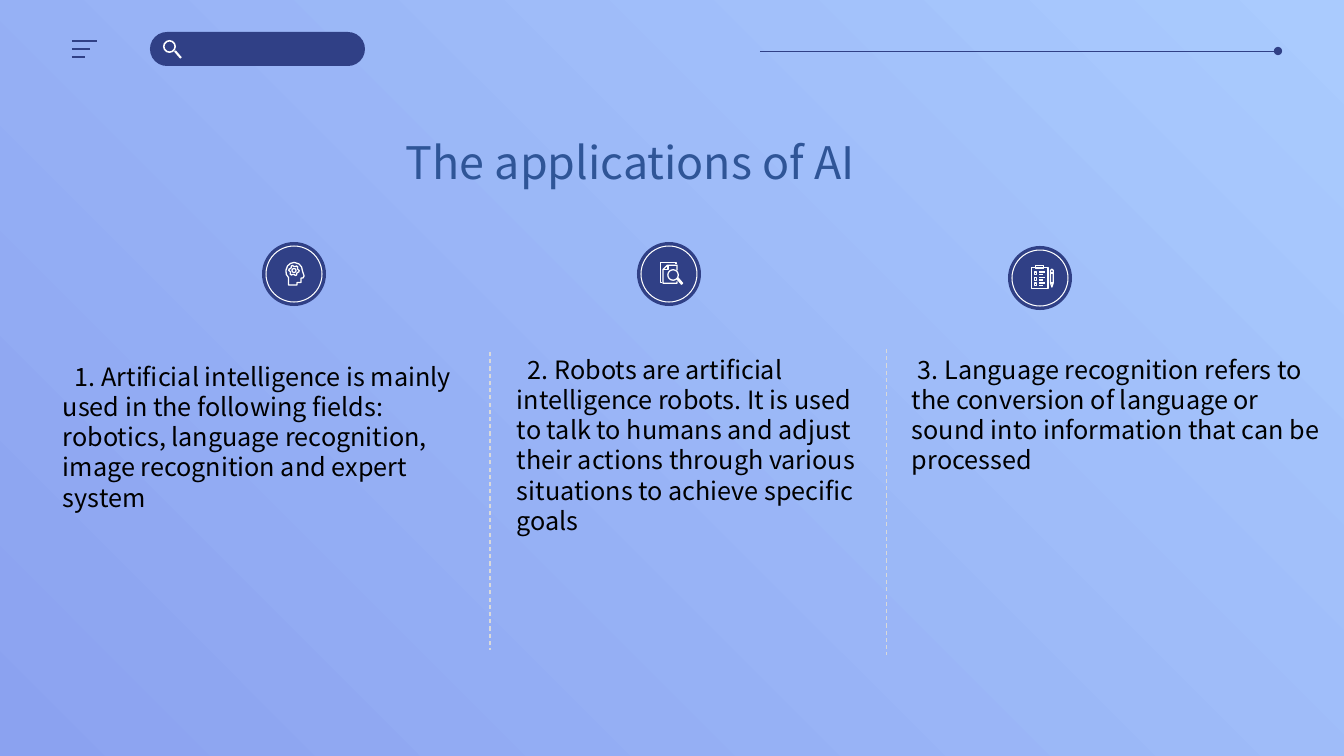
import math
import pptx
import pptx.util
import pptx.dml.color
import pptx.enum.dml
import pptx.enum.shapes
import pptx.enum.text
import lxml.etree

PX = 914400 / 100.8
NAVY, WHITE, GREY = "304086", "FFFFFF", "D9D9D9"
FONT = "Noto Sans CJK SC"
KIND = pptx.enum.shapes.MSO_SHAPE
DASH = pptx.enum.dml.MSO_LINE.DASH
NS = "{http://schemas.openxmlformats.org/drawingml/2006/main}"


def emu(px):
    """Turn px into EMU."""
    return pptx.util.Emu(round(px * PX))


def color(text):
    """Turn a hex string into a colour."""
    return pptx.dml.color.RGBColor.from_string(text)


def put(item, form):
    """Set each attribute of the item."""
    for name, value in form.items():
        setattr(item, name, value)


def style(shape, fill=None, line=None, width=1):
    """Set fill and line, with no shadow."""
    shape.shadow.inherit = False
    for part, tone in ((shape.fill, fill), (shape.line.fill, line)):
        if tone:
            part.solid()
            part.fore_color.rgb = color(tone)
        else:
            part.background()
    if line:
        shape.line.width = pptx.util.Pt(width)


def block(slide, kind, box, **form):
    """Add a preset shape in the box."""
    shape = slide.shapes.add_shape(kind, *map(emu, box))
    style(shape, **form)
    return shape


def rule(slide, start, end, tone, width, dash=None, tail=None):
    """Add a straight line."""
    line = slide.shapes.add_connector(
        pptx.enum.shapes.MSO_CONNECTOR.STRAIGHT, *map(emu, start + end))
    line.line.fill.solid()
    line.line.fill.fore_color.rgb = color(tone)
    put(line.line, {"width": pptx.util.Pt(width), "dash_style": dash})
    if tail:
        lxml.etree.SubElement(line.line._ln, NS + "tailEnd", type=tail)
    lxml.etree.SubElement(line._element.spPr, NS + "effectLst")


def write(slide, box, text, size, tone, indent, space=None):
    """Add a text box with a first-line indent."""
    frame = slide.shapes.add_textbox(*map(emu, box)).text_frame
    put(frame, {"word_wrap": True,
                "auto_size": pptx.enum.text.MSO_AUTO_SIZE.NONE})
    para = frame.paragraphs[0]
    if space:
        para.line_spacing = space
    para._p.get_or_add_pPr().set("indent", str(emu(indent)))
    run = para.add_run()
    run.text = text
    put(run.font, {"size": pptx.util.Pt(size), "name": FONT})
    run.font.color.rgb = color(tone)


def ring(x, y, radii, count=24):
    """Give the points of a closed ring, its radii taken in turn."""
    turn = math.tau / count
    return [(round(x + radii[i % len(radii)] * math.cos(i * turn)),
             round(y + radii[i % len(radii)] * math.sin(i * turn)))
            for i in range(count + 1)]


def frame(left, top, right, base):
    """Give the points of a closed rectangle."""
    return [(left, top), (right, top), (right, base), (left, base), (left, top)]


def head():
    """Give the strokes of a head with a gear, in tenths of px."""
    face = [(2, -116), (51, -100), (76, -70), (86, -25), (101, 20), (90, 40),
            (70, 42), (70, 85), (30, 85), (30, 110), (-55, 110), (-55, 35),
            (-76, 5), (-81, -35), (-65, -80), (-35, -106), (2, -116)]
    return [face, ring(0, -35, (52, 52, 40, 40)), ring(0, -35, (20,))]


def search():
    """Give the strokes of pages under a lens, in tenths of px."""
    back = [(70, -96), (70, -116), (-86, -116), (-86, 82), (-65, 82)]
    page = [(81, -36), (81, -88), (-15, -88), (-60, -44), (-60, 92),
            (81, 92), (81, 75)]
    fold = [(-10, -88), (-10, -41), (-60, -41)]
    grip = [(78, 47), (125, 102), (136, 92), (89, 37)]
    return [back, page, fold, ring(41, 10, (52,)), grip]


def board():
    """Give the strokes of a checklist and a pen, in tenths of px."""
    pen = [(106, -76), (106, 50), (119, 91), (133, 50), (133, -76),
           (119, -88), (106, -76)]
    marks = [frame(-86, -106, 81, 106), frame(-45, -121, 35, -91), pen,
             [(106, -50), (133, -50)], [(106, 50), (133, 50)]]
    for y in (-45, 10, 65):
        marks += [frame(-58, y - 13, -32, y + 13),
                  [(-11, y - 14), (50, y - 14)], [(-11, y + 11), (30, y + 11)]]
    return marks


def badge(slide, box, marks):
    """Add a round badge with a ringed icon."""
    x, y, size = box
    block(slide, KIND.OVAL, (x, y, size, size), fill=NAVY)
    block(slide, KIND.OVAL, (x + 4, y + 4, size - 8, size - 8),
          line=WHITE, width=0.75)
    path = slide.shapes.build_freeform(*marks[0][0], scale=PX / 10)
    path.add_line_segments(marks[0][1:], close=False)
    for mark in marks[1:]:
        path.move_to(*mark[0])
        path.add_line_segments(mark[1:], close=False)
    icon = path.convert_to_shape(emu(x + size / 2), emu(y + size / 2))
    style(icon, line=WHITE, width=0.9)


def header(slide, box):
    """Add the menu, the search bar and the long line."""
    x, y, wide = box
    bar = block(slide, KIND.ROUNDED_RECTANGLE, (x + 78, y, 215, 34), fill=NAVY)
    bar.adjustments[0] = 0.5
    lens = block(slide, KIND.DONUT, (x + 91, y + 8, 13, 13), fill=WHITE)
    lens.adjustments[0] = 0.125
    rule(slide, (x + 103, y + 19), (x + 109, y + 26), WHITE, 1.5)
    for i, size in enumerate((25, 18, 13)):
        level = y + 9 + 8 * i
        rule(slide, (x, level), (x + size, level), NAVY, 1.5)
    rule(slide, (x + 688, y + 19), (x + wide, y + 19), NAVY, 0.5, tail="oval")


def build():
    """Build the slide and save it."""
    deck = pptx.Presentation()
    put(deck, {"slide_width": emu(1344), "slide_height": emu(756)})
    slide = deck.slides.add_slide(deck.slide_layouts[6])
    back = slide.background.fill
    back.gradient()
    back.gradient_angle = 45
    for stop, tone, place in zip(back.gradient_stops, ("8BA2F0", "AACBFE"), (0, 1)):
        stop.color.rgb = color(tone)
        stop.position = place
    header(slide, (72, 32, 1206))
    write(slide, (327, 130, 728, 71), "The applications of AI", 32, "2F5597", 69)
    for spot, marks in (((262, 242, 64), head()), ((637, 242, 64), search()),
                        ((1008, 246, 64), board())):
        badge(slide, spot, marks)
    for x, top, base in ((490, 352, 650), (887, 349, 655)):
        rule(slide, (x, top), (x, base), GREY, 0.75, dash=DASH)
    notes = (
        ((53, 356, 409, 194), 12, "1. Artificial intelligence is mainly used in "
         "the following fields: robotics, language recognition, image "
         "recognition and expert system"),
        ((507, 349, 366, 224), 11, "2. Robots are artificial intelligence robots. "
         "It is used to talk to humans and adjust their actions through various "
         "situations to achieve specific goals"),
        ((902, 349, 445, 162), 6, "3. Language recognition refers to the conversion "
         "of language or sound into information that can be processed"))
    for box, indent, text in notes:
        write(slide, box, text, 18, "000000", indent)
    deck.save("out.pptx")


if __name__ == "__main__":
    build()
